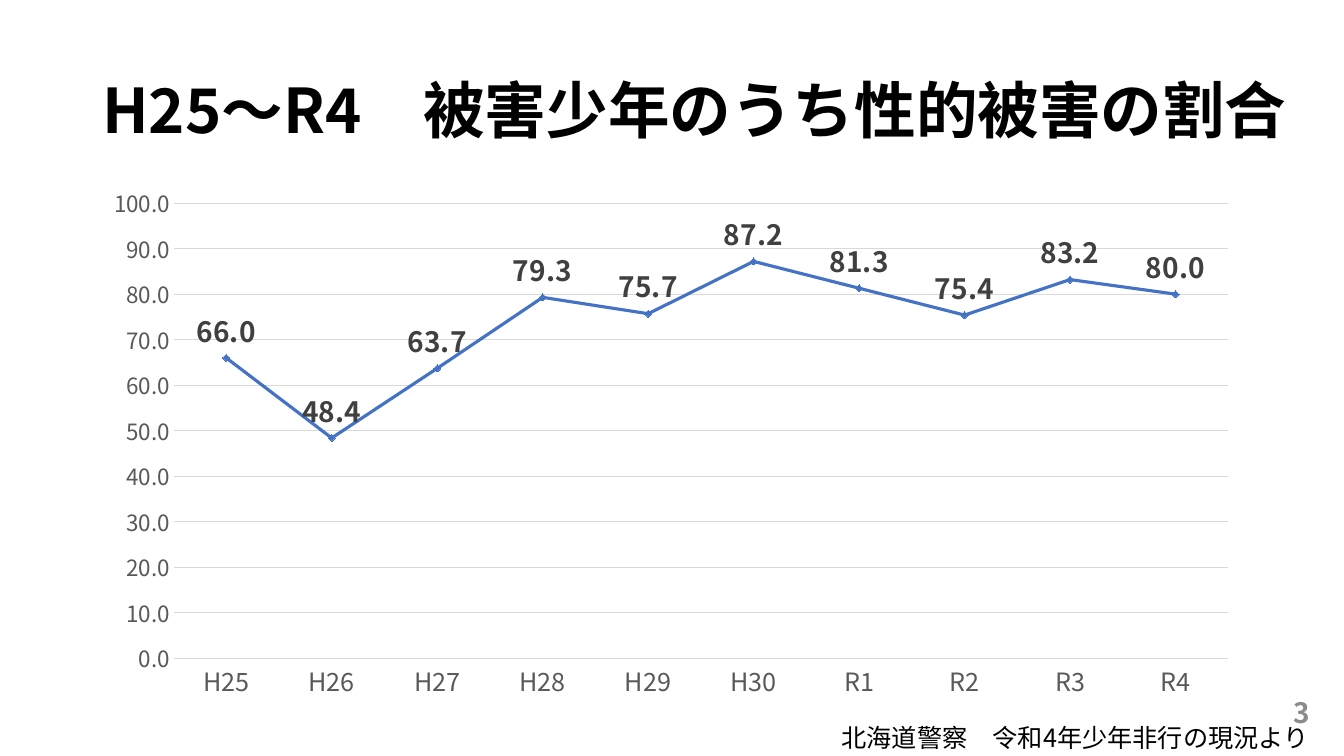
from lxml import etree
from pptx import Presentation, util as u
from pptx.chart import data
from pptx.dml import color
from pptx.enum import chart as ch, text
from pptx.oxml import ns

FONT = "Noto Sans CJK JP"
RATES = {
    "H25": 66.0, "H26": 48.4, "H27": 63.7, "H28": 79.3, "H29": 75.7,
    "H30": 87.2, "R1": 81.3, "R2": 75.4, "R3": 83.2, "R4": 80.0,
}


def rgb(value):
    return color.RGBColor.from_string(value)


def style_font(font, size, tint, bold=False):
    font.name, font.size, font.bold = FONT, u.Pt(size), bold
    font.color.rgb = rgb(tint)


def style_line(line, tint, width):
    line.color.rgb = rgb(tint)
    line.width = u.Pt(width)


def add_words(slide, box, words, size, tint="000000", bold=False,
              align=text.PP_ALIGN.LEFT, anchor=text.MSO_ANCHOR.TOP, spacing=1.0):
    frame = slide.shapes.add_textbox(*map(u.Pt, box)).text_frame
    frame.word_wrap = True
    frame.vertical_anchor = anchor
    paragraph = frame.paragraphs[0]
    paragraph.alignment = align
    paragraph.line_spacing = spacing
    run = paragraph.add_run()
    run.text = words
    style_font(run.font, size, tint, bold)
    east_asian = etree.SubElement(run.font._element, ns.qn("a:ea"))
    east_asian.set("typeface", FONT)


def place_plot(chart, **fractions):
    plot_area = chart._chartSpace.chart.plotArea
    for automatic in plot_area.findall(ns.qn("c:layout")):
        plot_area.remove(automatic)
    layout = etree.Element(ns.qn("c:layout"))
    manual = etree.SubElement(layout, ns.qn("c:manualLayout"))
    settings = {"layoutTarget": "inner", "xMode": "edge", "yMode": "edge", **fractions}
    for key, value in settings.items():
        etree.SubElement(manual, ns.qn(f"c:{key}")).set("val", str(value))
    plot_area.insert(0, layout)


def add_rate_chart(slide, box):
    rates = data.CategoryChartData(number_format="0.0")
    rates.categories = RATES.keys()
    rates.add_series("Series 1", RATES.values())
    chart = slide.shapes.add_chart(
        ch.XL_CHART_TYPE.LINE_MARKERS, *map(u.Pt, box), rates).chart
    chart.has_legend = chart.has_title = False
    style_font(chart.font, 10, "000000")
    place_plot(chart, x=0.07, y=0.05, w=0.91, h=0.85)

    eras, percent = chart.category_axis, chart.value_axis
    for axis, size in ((eras, 18), (percent, 16)):
        axis.major_tick_mark = axis.minor_tick_mark = ch.XL_TICK_MARK.NONE
        style_font(axis.tick_labels.font, size, "595959")
    style_line(eras.format.line, "D9D9D9", 0.75)
    percent.format.line.fill.background()
    percent.minimum_scale, percent.maximum_scale, percent.major_unit = 0, 100, 10
    percent.has_major_gridlines = True
    style_line(percent.major_gridlines.format.line, "D9D9D9", 0.75)
    percent.tick_labels.number_format = "0.0"
    percent.tick_labels.number_format_is_linked = False

    plot = chart.plots[0]
    plot.vary_by_categories = False
    trend = plot.series[0]
    trend.smooth = False
    style_line(trend.format.line, "4472C4", 2.25)
    trend.marker.style = ch.XL_MARKER_STYLE.DIAMOND
    trend.marker.size = 5
    trend.marker.format.fill.solid()
    trend.marker.format.fill.fore_color.rgb = rgb("5B9BD5")
    style_line(trend.marker.format.line, "4472C4", 0.75)
    labels = trend.data_labels
    labels.show_value = True
    labels.position = ch.XL_LABEL_POSITION.ABOVE
    labels.number_format = "0.0"
    labels.number_format_is_linked = False
    style_font(labels.font, 20, "404040", True)


def add_heading(slide, box):
    add_words(slide, box, "H25～R4　被害少年のうち性的被害の割合", 44, bold=True,
              anchor=text.MSO_ANCHOR.MIDDLE, spacing=0.9)


def add_footer(slide, box):
    left, top, width, height = box
    add_words(slide, (left, top + 18.7, width, 29),
              "北海道警察　令和4年少年非行の現況より", 18)
    add_words(slide, (left + 132.5, top, 216, 29), "3", 20, "8C8C8C", True,
              text.PP_ALIGN.RIGHT, text.MSO_ANCHOR.MIDDLE)


def main():
    deck = Presentation()
    deck.slide_width, deck.slide_height = u.Pt(960), u.Pt(540)
    slide = deck.slides.add_slide(deck.slide_layouts[6])
    add_heading(slide, (66, 28.75, 860.5, 104.4))
    add_rate_chart(slide, (66, 126, 828, 382.5))
    add_footer(slide, (594, 494, 374.4, 47.7))
    deck.save("out.pptx")


if __name__ == "__main__":
    main()
